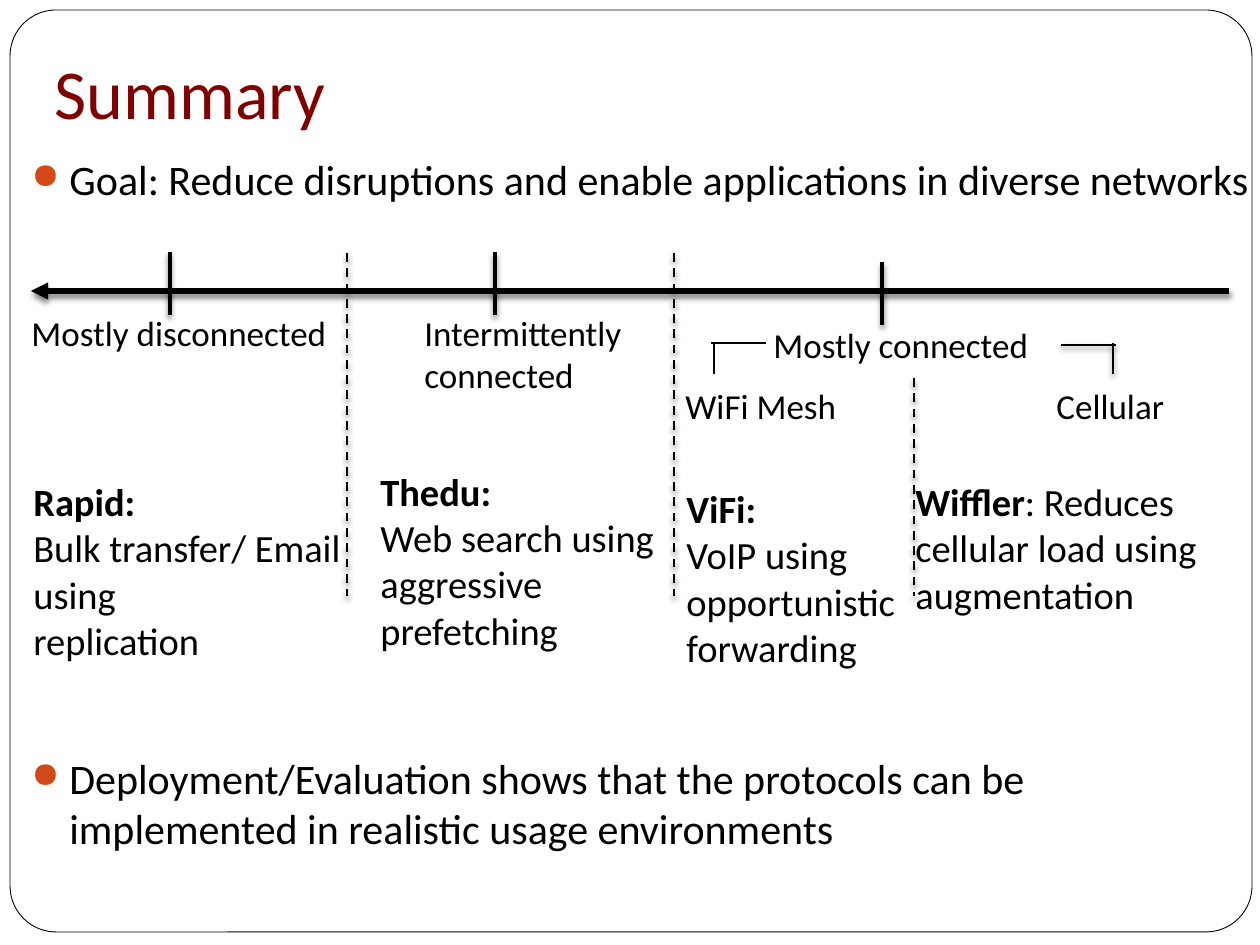
from lxml import etree
from pptx import Presentation
from pptx.dml.color import RGBColor
from pptx.enum.dml import MSO_LINE
from pptx.enum.shapes import MSO_CONNECTOR, MSO_SHAPE
from pptx.enum.text import MSO_ANCHOR
from pptx.oxml.ns import qn
from pptx.util import Emu, Pt

ROUNDED = MSO_SHAPE.ROUNDED_RECTANGLE
STRAIGHT = MSO_CONNECTOR.STRAIGHT
DASH = MSO_LINE.DASH
TOP, BOTTOM = MSO_ANCHOR.TOP, MSO_ANCHOR.BOTTOM

PX = 914400 / 126
WIDTH, HEIGHT = 1260, 945
FONT = "Calibri"
COLORS = {"ink": "000000", "paper": "FFFFFF", "title": "800000", "bullet": "D34817"}

# Content: boxes are (left, top, width, height)
TITLE = ("Summary", (42, -10, 1218, 157))
BULLETS = [
    ("Goal: Reduce disruptions and enable applications in diverse networks",
     (19, 147, 1292, 116)),
    ("Deployment/Evaluation shows that the protocols can be implemented "
     "in realistic usage environments", (19, 746, 1207, 116)),
]
LABELS = [
    (["Mostly disconnected"], (19, 305, 323, 55)),
    (["Intermittently", "connected"], (412, 305, 226, 97)),
    (["Mostly connected"], (761, 317, 300, 55)),
    (["WiFi Mesh"], (673, 378, 241, 55)),
    (["Cellular"], (1044, 378, 184, 55)),
]
# Each protocol: paragraphs of (text, bold) runs
PROTOCOLS = [
    ([[("Rapid:", True)], [("Bulk transfer/ Email using", False)],
      [("replication", False)]], (21, 472)),
    ([[("Thedu:", True)], [("Web search using aggressive prefetching", False)]],
     (368, 462)),
    ([[("ViFi:", True)], [("VoIP using opportunistic forwarding", False)]],
     (674, 479)),
    ([[("Wiffler", True), (": Reduces cellular load using augmentation", False)]],
     (903, 472)),
]
PROTOCOL_SIZE = (348, 199)

# Lines
AXIS = (31, 291, 1229, 291)
TICKS = [(170, 252), (495, 252), (882, 262)]  # x, top
TICK_LENGTH = 63
DIVIDERS = [(347, 253), (674, 253), (914, 378)]  # x, top
DIVIDER_BOTTOM = 596
BRACKETS = [  # line, width in points, shadow
    ((714, 343, 714, 374), 1.5, False),
    ((766, 343, 711, 343), 1.5, False),
    ((1116, 345, 1061, 345), 1, True),
    ((1113, 343, 1113, 374), 1, True),
]


def emu(*lengths):
    return [Emu(round(length * PX)) for length in lengths]


def rgb(name):
    return RGBColor.from_string(COLORS[name])


def add_text(slide, paragraphs, box, size, color="ink", anchor=TOP):
    """Add a text box; each paragraph is a list of (text, bold) runs."""
    frame = slide.shapes.add_textbox(*emu(*box)).text_frame
    frame.word_wrap = True
    frame.vertical_anchor = anchor
    for index, runs in enumerate(paragraphs):
        paragraph = frame.paragraphs[0] if index == 0 else frame.add_paragraph()
        paragraph.font.name = FONT
        paragraph.font.size = Pt(size)
        paragraph.font.color.rgb = rgb(color)
        for text, bold in runs:
            run = paragraph.add_run()
            run.text = text
            run.font.bold = bold
    return frame


def add_bullet(paragraph):
    properties = paragraph._p.get_or_add_pPr()
    indent = emu(38)[0]
    properties.set("marL", str(indent))
    properties.set("indent", str(-indent))
    color = etree.Element(qn("a:buClr"))
    etree.SubElement(color, qn("a:srgbClr"), val=COLORS["bullet"])
    size = etree.Element(qn("a:buSzPct"), val="85000")
    character = etree.Element(qn("a:buChar"), char="●")
    for position, element in enumerate((color, size, character)):
        properties.insert(position, element)


def add_line(slide, ends, width, shadow=True, dashed=False, arrow=False):
    connector = slide.shapes.add_connector(STRAIGHT, *emu(*ends))
    connector.line.color.rgb = rgb("ink")
    connector.line.width = Pt(width)
    if dashed:
        connector.line.dash_style = DASH
    if arrow:
        etree.SubElement(connector.line._get_or_add_ln(), qn("a:headEnd"), type="triangle")
    effects = etree.SubElement(connector._element.spPr, qn("a:effectLst"))
    if shadow:
        outer = etree.SubElement(effects, qn("a:outerShdw"), blurRad=str(Pt(3)),
                                 dist=str(Pt(2)), dir="5400000", rotWithShape="0")
        color = etree.SubElement(outer, qn("a:srgbClr"), val=COLORS["ink"])
        etree.SubElement(color, qn("a:alpha"), val="50000")


def main():
    presentation = Presentation()
    presentation.slide_width, presentation.slide_height = emu(WIDTH, HEIGHT)
    slide = presentation.slides.add_slide(presentation.slide_layouts[6])

    # Frame
    frame = slide.shapes.add_shape(ROUNDED, *emu(10, 10, 1242, 922))
    frame.adjustments[0] = 0.05
    frame.shadow.inherit = False
    frame.fill.solid()
    frame.fill.fore_color.rgb = rgb("paper")
    frame.line.color.rgb = rgb("ink")
    frame.line.width = Pt(0.5)

    # Title
    text, box = TITLE
    title = add_text(slide, [[(text, False)]], box, 40, "title", BOTTOM)
    title.margin_bottom = emu(13)[0]

    # Connectivity axis, ticks, dividers and brackets
    for x, top in DIVIDERS:
        add_line(slide, (x, top, x, DIVIDER_BOTTOM), 1.25, dashed=True)
    add_line(slide, AXIS, 3.25, arrow=True)
    for x, top in TICKS:
        add_line(slide, (x, top, x, top + TICK_LENGTH), 2)
    for ends, width, shadow in BRACKETS:
        add_line(slide, ends, width, shadow)

    # Labels and protocols
    for lines, box in LABELS:
        add_text(slide, [[(line, False)] for line in lines], box, 20)
    for paragraphs, corner in PROTOCOLS:
        add_text(slide, paragraphs, corner + PROTOCOL_SIZE, 22)

    # Bullets
    for text, box in BULLETS:
        add_bullet(add_text(slide, [[(text, False)]], box, 24).paragraphs[0])

    presentation.save("out.pptx")


if __name__ == "__main__":
    main()
